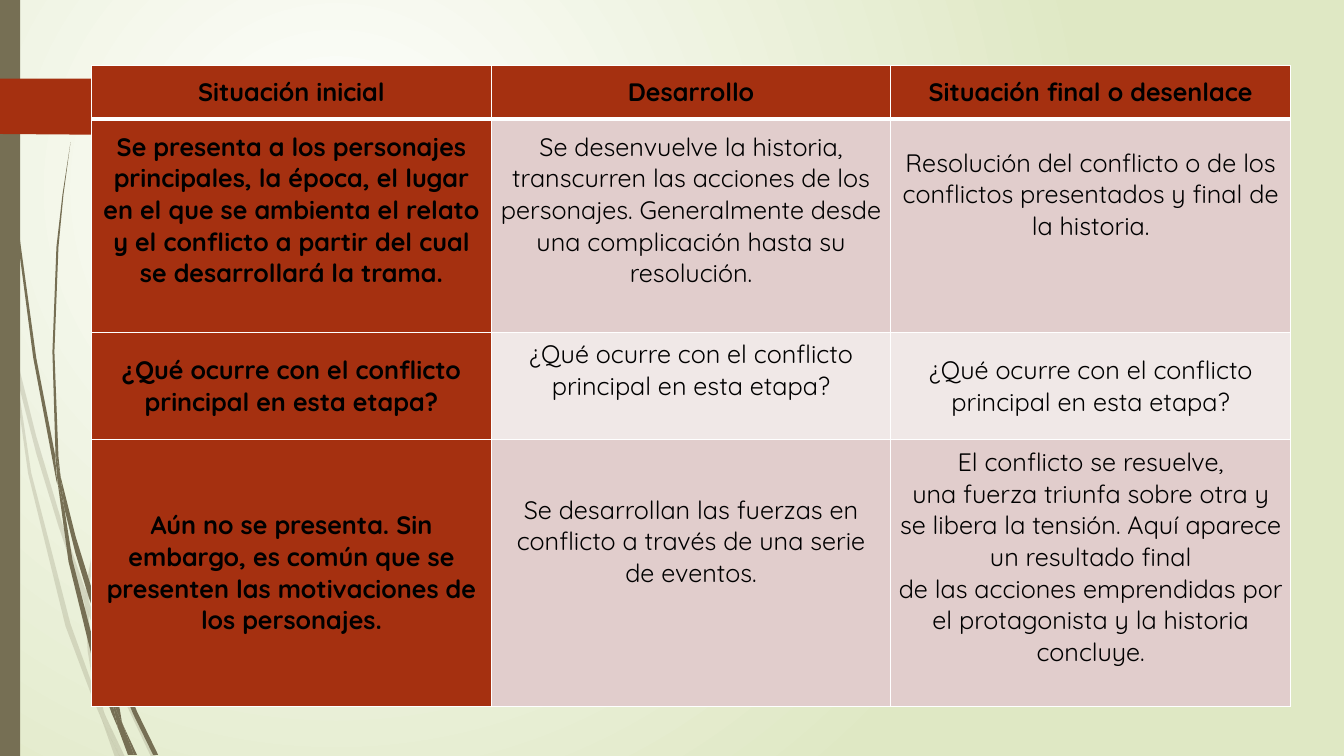
from lxml.etree import SubElement
from pptx import Presentation
from pptx.dml.color import RGBColor
from pptx.enum.shapes import MSO_SHAPE as Preset
from pptx.enum.text import MSO_ANCHOR as Anchor, PP_ALIGN as Align
from pptx.oxml import parse_xml
from pptx.oxml.ns import nsdecls, qn
from pptx.util import Cm, Pt

COLORS = {
    "white": "FFFFFF", "black": "000000", "pale_green": "DFE8C4",
    "olive": "766F54", "rust": "A53010",
    "band_dark": "E1CDCC", "band_light": "F0E8E7",
}
FONT = "Quicksand"
LINE_HEIGHT = Cm(0.79)
OUTLINE_UNIT = Cm(2.54) / 100  # outlines are drawn on a grid of 1/100 inch

# Grass blades, each a list of corner points
PALE_GRASS = [
    [(11, 350), (9, 322), (0, 282), (0, 299), (10, 344)],
    [(58, 522), (84, 599), (85, 586), (62, 520), (36, 433), (14, 345), (17, 376), (36, 450)],
    [(92, 607), (88, 596), (88, 610), (123, 694), (150, 751), (155, 751), (127, 692)],
    [(119, 751), (124, 751), (105, 711)],
    [(93, 683), (70, 619), (31, 469), (17, 376), (11, 350), (28, 470), (65, 621),
     (92, 693), (101, 714), (99, 707)],
    [(84, 599), (87, 646), (93, 683), (96, 692), (105, 711), (103, 706), (91, 646),
     (88, 610), (88, 608)],
    [(88, 584), (110, 462), (160, 349), (229, 245), (268, 198), (290, 175), (312, 154),
     (312, 153), (289, 175), (268, 197), (228, 244), (158, 348), (107, 461), (85, 584),
     (85, 586), (88, 596)],
    [(101, 714), (114, 751), (119, 751)],
    [(88, 608), (88, 610), (88, 596), (85, 586), (84, 599)],
    [(96, 692), (93, 683), (99, 707), (101, 714), (119, 751), (105, 711)],
]
DARK_GRASS = [
    [(7, 110), (17, 233), (33, 355), (56, 477), (57, 481), (55, 457), (55, 453), (36, 355),
     (19, 232), (8, 109), (5, 48), (4, 0), (3, 0), (4, 48)],
    [(88, 592), (106, 645), (106, 633), (106, 631), (93, 590), (75, 532), (60, 472),
     (64, 505), (75, 549)],
    [(113, 649), (110, 641), (111, 656), (132, 708), (152, 749), (157, 749), (136, 706)],
    [(110, 691), (98, 657), (72, 556), (64, 505), (57, 477), (68, 557), (93, 659),
     (111, 708), (117, 722), (116, 717)],
    [(60, 472), (58, 453), (54, 349), (58, 245), (63, 193), (70, 141), (62, 193),
     (56, 245), (52, 349), (55, 449)],
    [(133, 749), (136, 749), (122, 719)],
    [(57, 477), (64, 505), (60, 472), (55, 449), (55, 453)],
    [(111, 633), (125, 552), (158, 476), (205, 406), (231, 374), (245, 359), (261, 344),
     (260, 344), (245, 358), (231, 373), (204, 405), (156, 474), (122, 551), (106, 631),
     (110, 641)],
    [(117, 722), (127, 749), (131, 749)],
    [(106, 645), (110, 691), (116, 706), (122, 719), (121, 716), (111, 656), (109, 651)],
    [(106, 645), (109, 651), (111, 656), (110, 641), (106, 631), (106, 633)],
    [(116, 706), (110, 691), (116, 717), (117, 722), (130, 749), (133, 749), (122, 719)],
]
PAGE_MARKER = [(173, 108), (148, 133), (146, 134), (136, 134), (0, 133), (0, 78),
               (136, 78), (146, 78), (148, 79), (173, 104), (174, 106)]

# Table content: text and free lines kept below it
STAGE_QUESTION = "¿Qué ocurre con el conflicto principal en esta etapa?"
STAGES = [
    [("Situación inicial", 0), ("Desarrollo", 0), ("Situación final o desenlace", 0)],
    [("Se presenta a los personajes principales, la época, el lugar en el que se ambienta "
      "el relato y el conflicto a partir del cual se desarrollará la trama.", 1),
     ("Se desenvuelve la historia, transcurren las acciones de los personajes. "
      "Generalmente desde una complicación hasta su resolución.", 1),
     ("Resolución del conflicto o de los conflictos presentados y final de la historia.", 2)],
    [(STAGE_QUESTION, 0), (STAGE_QUESTION, 1), (STAGE_QUESTION, 0)],
    [("Aún no se presenta. Sin embargo, es común que se presenten las motivaciones "
      "de los personajes.", 0),
     ("Se desarrollan las fuerzas en conflicto a través de una serie de eventos.", 2),
     ("El conflicto se resuelve,\n"
      "una fuerza triunfa sobre otra y se libera la tensión. Aquí aparece un resultado final\n"
      "de las acciones emprendidas por el protagonista y la historia concluye.", 1)],
]
ROW_HEIGHTS = [1.35, 5.38, 2.69, 6.73]
COLUMN_WIDTH = 10.07


def rgb(name):
    return RGBColor.from_string(COLORS[name])


def paint(shape, color, opacity=100):
    shape.shadow.inherit = False
    shape.fill.solid()
    shape.fill.fore_color.rgb = rgb(color)
    shape.line.fill.background()
    if opacity < 100:
        color_element = shape.fill._xPr.find(qn("a:solidFill"))[0]
        SubElement(color_element, qn("a:alpha"), val=str(opacity * 1000))


def add_outline(slide, points, color, opacity=100):
    builder = slide.shapes.build_freeform(*points[0], scale=OUTLINE_UNIT)
    builder.add_line_segments(points[1:], close=True)
    paint(builder.convert_to_shape(), color, opacity)


def set_background(slide):
    fill = slide.background.fill
    fill.gradient()
    for stop, color in zip(fill.gradient_stops, ("white", "pale_green")):
        stop.color.rgb = rgb(color)
    gradient = slide.element.xpath(".//p:bg//a:gradFill")[0]
    for linear in gradient.findall(qn("a:lin")):
        gradient.remove(linear)
    gradient.append(parse_xml(
        f'<a:path {nsdecls("a")} path="circle">'
        '<a:fillToRect l="50000" t="50000" r="100000" b="100000"/></a:path>'))


def write_text(frame, text, size=18, bold=False, color="black", align=Align.CENTER):
    for index, line in enumerate(text.split("\n")):
        paragraph = frame.add_paragraph() if index else frame.paragraphs[0]
        paragraph.alignment = align
        run = paragraph.add_run()
        run.text = line
        run.font.name = FONT
        run.font.size = Pt(size)
        run.font.bold = bold
        run.font.color.rgb = rgb(color)


def set_borders(cell, **widths):
    properties = cell._tc.get_or_add_tcPr()
    for index, side in enumerate("LRTB"):
        width = Pt(widths.get(side, 1))
        properties.insert(index, parse_xml(
            f'<a:ln{side} {nsdecls("a")} w="{width}"><a:solidFill>'
            f'<a:srgbClr val="{COLORS["white"]}"/></a:solidFill></a:ln{side}>'))


def fill_cell(cell, text, free_lines, color, bold):
    cell.fill.solid()
    cell.fill.fore_color.rgb = rgb(color)
    cell.vertical_anchor = Anchor.MIDDLE
    cell.margin_left = cell.margin_right = Cm(0.19)
    cell.margin_top = 0
    cell.margin_bottom = free_lines * LINE_HEIGHT
    write_text(cell.text_frame, text, bold=bold)


def add_stage_table(slide):
    column_count = len(STAGES[0])
    table = slide.shapes.add_table(
        len(STAGES), column_count, Cm(2.31), Cm(1.65),
        Cm(COLUMN_WIDTH * column_count), Cm(sum(ROW_HEIGHTS))).table
    for column in table.columns:
        column.width = Cm(COLUMN_WIDTH)
    for row_index, (height, stage_row) in enumerate(zip(ROW_HEIGHTS, STAGES)):
        table.rows[row_index].height = Cm(height)
        band = "band_dark" if row_index % 2 else "band_light"
        for column_index, (text, free_lines) in enumerate(stage_row):
            heading = row_index == 0 or column_index == 0
            cell = table.cell(row_index, column_index)
            fill_cell(cell, text, free_lines, "rust" if heading else band, heading)
            set_borders(cell, T=3 if row_index == 1 else 1, B=3 if row_index == 0 else 1)


def main():
    presentation = Presentation()
    presentation.slide_width, presentation.slide_height = Cm(33.87), Cm(19.05)
    slide = presentation.slides.add_slide(presentation.slide_layouts[6])
    set_background(slide)

    # Grass, side bar and page marker
    for blade in PALE_GRASS:
        add_outline(slide, blade, "olive", opacity=20)
    for blade in DARK_GRASS:
        add_outline(slide, blade, "olive")
    side_bar = slide.shapes.add_shape(Preset.RECTANGLE, 0, 0, Cm(0.51), Cm(19.05))
    paint(side_bar, "olive")
    add_outline(slide, PAGE_MARKER, "rust")

    # Stages of the story
    add_stage_table(slide)
    presentation.save("out.pptx")


if __name__ == "__main__":
    main()
